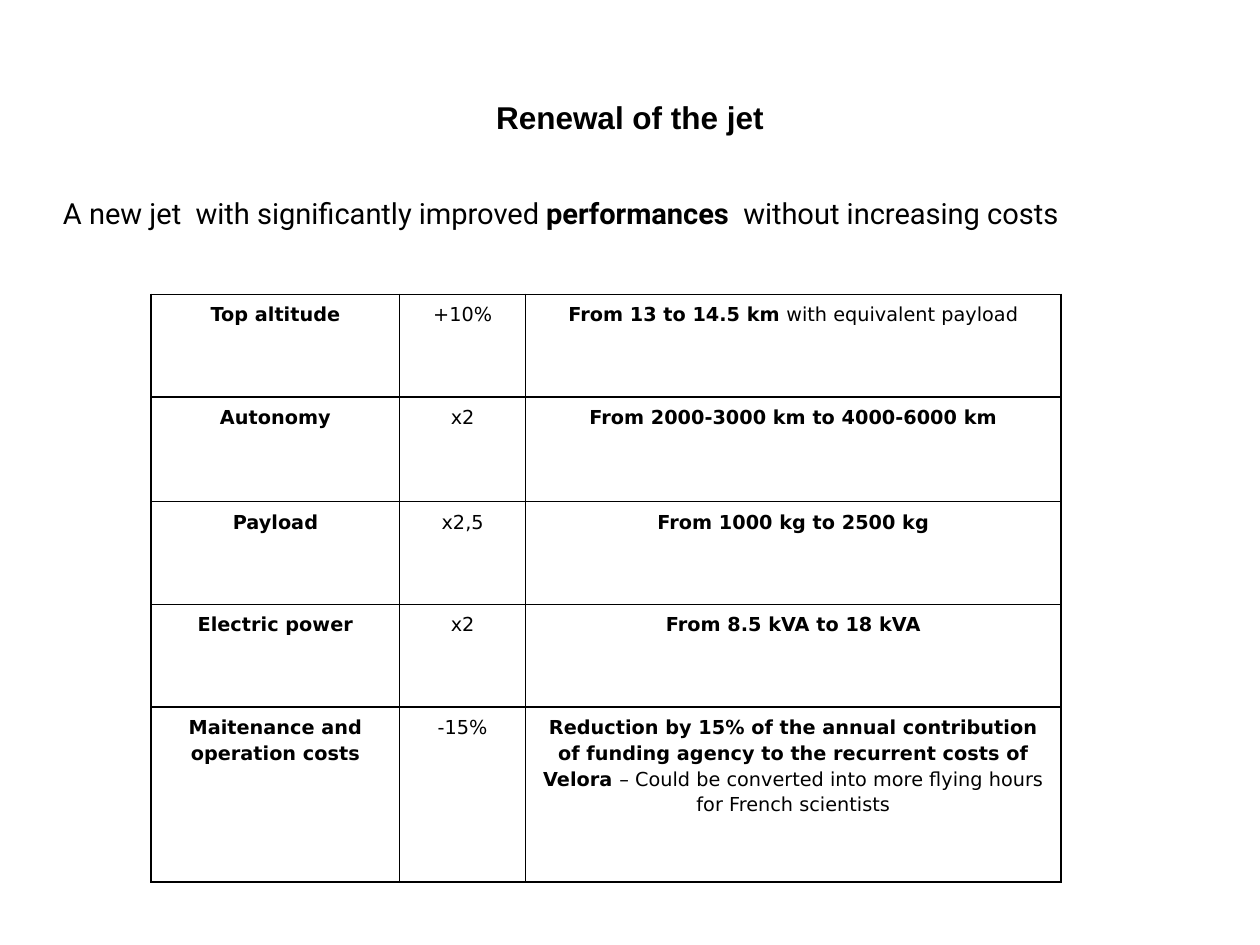
from lxml import etree
from pptx import Presentation
from pptx.dml.color import RGBColor
from pptx.enum.text import MSO_ANCHOR, PP_ALIGN
from pptx.oxml.ns import qn
from pptx.util import Pt

CENTER, LEFT = PP_ALIGN.CENTER, PP_ALIGN.LEFT
TOP, MIDDLE = MSO_ANCHOR.TOP, MSO_ANCHOR.MIDDLE
BLACK, WHITE = "000000", "FFFFFF"

# Content: each text is a list of (wording, bold) runs
TITLE = [("Renewal of the jet", True)]
SUBTITLE = [
    ("A new jet  with significantly improved ", False),
    ("performances  ", True),
    ("without increasing costs", False),
]
# Criterion, change, detail
ROWS = [
    ("Top altitude", "+10%",
     [("From 13 to 14.5 km", True), (" with equivalent payload", False)]),
    ("Autonomy", "x2", [("From 2000-3000 km to 4000-6000 km", True)]),
    ("Payload", "x2,5", [("From 1000 kg to 2500 kg", True)]),
    ("Electric power", "x2", [("From 8.5 kVA to 18 kVA", True)]),
    ("Maitenance and operation costs", "-15%",
     [("Reduction by 15% of the annual contribution of funding agency "
       "to the recurrent costs of Velora ", True),
      ("– Could be converted into more flying hours for French scientists", False)]),
]
COL_WIDTHS = [142, 72, 306]
ROW_HEIGHTS = [58.7, 59.8, 58.7, 58.7, 100]
TABLE_LEFT, TABLE_TOP = 86.4, 168.2


def rgb(value):
    return RGBColor.from_string(value)


def write(p, runs, font, size, align):
    p.alignment = align
    for text, bold in runs:
        r = p.add_run()
        r.text = text
        r.font.name, r.font.size, r.font.bold = font, Pt(size), bold
        r.font.color.rgb = rgb(BLACK)


def add_text(s, box, runs, font, size, align, anchor):
    tf = s.shapes.add_textbox(*map(Pt, box)).text_frame
    tf.word_wrap = True
    tf.vertical_anchor = anchor
    tf.margin_left = tf.margin_right = tf.margin_top = tf.margin_bottom = 0
    write(tf.paragraphs[0], runs, font, size, align)


def add_borders(cell, color, width):
    tcPr = cell._tc.get_or_add_tcPr()
    for i, side in enumerate(("lnL", "lnR", "lnT", "lnB")):
        ln = etree.Element(qn("a:" + side), w=str(Pt(width)))
        fill = etree.SubElement(ln, qn("a:solidFill"))
        etree.SubElement(fill, qn("a:srgbClr"), val=color)
        tcPr.insert(i, ln)


def fill_cell(cell, runs):
    cell.fill.solid()
    cell.fill.fore_color.rgb = rgb(WHITE)
    cell.margin_left = cell.margin_right = Pt(5.2)
    cell.margin_top = cell.margin_bottom = Pt(3.6)
    p = cell.text_frame.paragraphs[0]
    p.line_spacing = 1.15
    write(p, runs, "DejaVu Sans", 11, CENTER)
    add_borders(cell, BLACK, 0.96)


prs = Presentation()
prs.slide_width, prs.slide_height = Pt(720), Pt(540)
s = prs.slides.add_slide(prs.slide_layouts[6])

# Title and subtitle
add_text(s, (36, 21.6, 648, 90), TITLE, "Arial", 18, CENTER, MIDDLE)
add_text(s, (36, 111.6, 720, 347.8), SUBTITLE, "Roboto", 16.6, LEFT, TOP)

# Performance table
table = s.shapes.add_table(
    len(ROWS), len(COL_WIDTHS), Pt(TABLE_LEFT), Pt(TABLE_TOP),
    Pt(sum(COL_WIDTHS)), Pt(sum(ROW_HEIGHTS))).table
table.first_row = table.horz_banding = False
for col, width in zip(table.columns, COL_WIDTHS):
    col.width = Pt(width)
for row, height, (criterion, change, detail) in zip(table.rows, ROW_HEIGHTS, ROWS):
    row.height = Pt(height)
    for cell, runs in zip(row.cells, ([(criterion, True)], [(change, False)], detail)):
        fill_cell(cell, runs)

prs.save("out.pptx")
